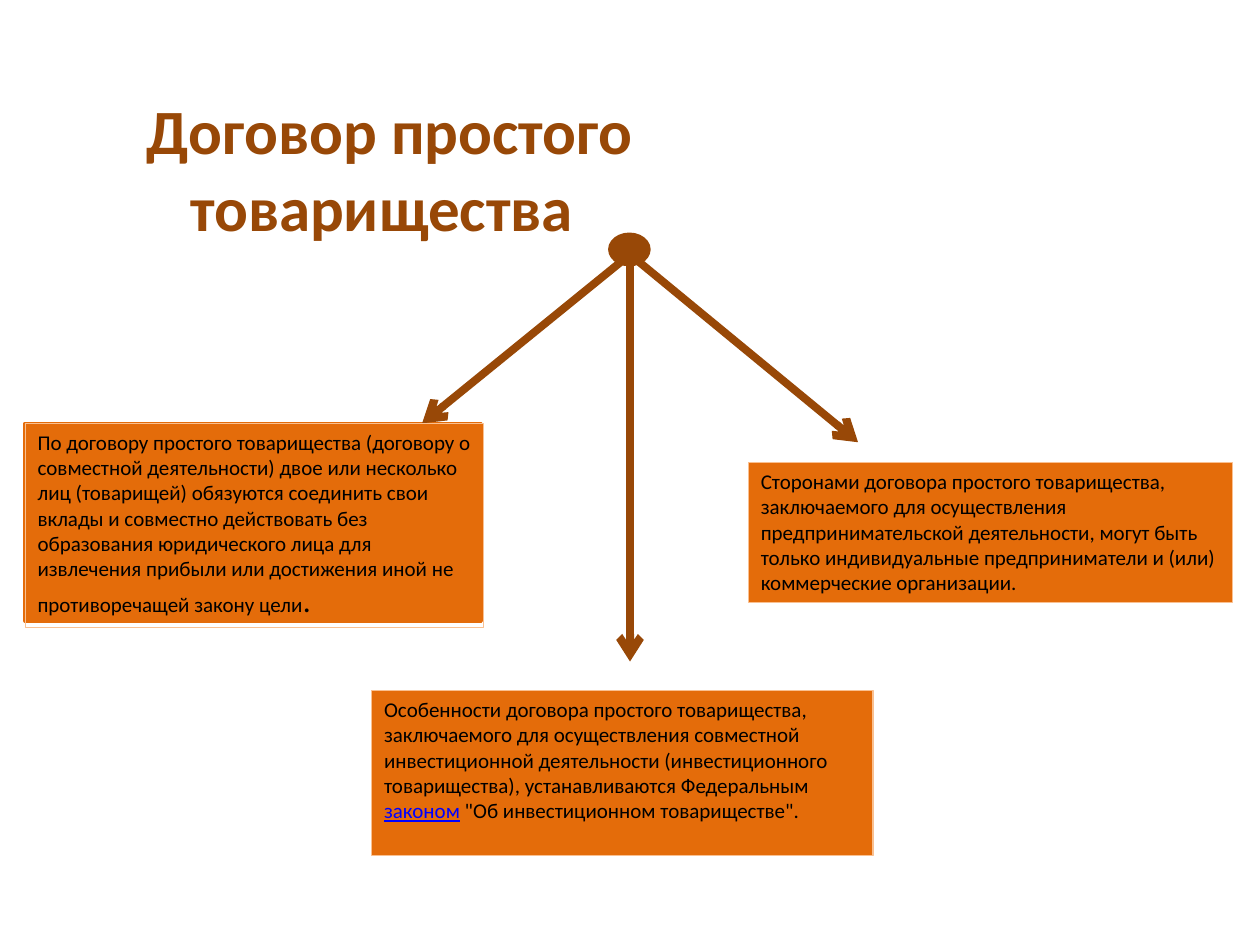
from lxml import etree
from pptx import Presentation
from pptx import util as u
from pptx.dml.color import RGBColor
from pptx.enum import shapes, text
from pptx.oxml.ns import qn

PX = 9144  # EMU per px, 100 px to the inch
FONT = "Calibri"
COLORS = {
    "brown": "984807",
    "orange": "E46C0A",
    "peach": "FAC090",
    "black": "000000",
    "blue": "0000FF",
}
HUB = (500, 202)

PARTNERSHIP = [
    ("По договору простого товарищества (договору о совместной деятельности) двое или "
     "несколько лиц (товарищей) обязуются соединить свои вклады и совместно действовать "
     "без образования юридического лица для извлечения прибыли или достижения иной не "
     "противоречащей закону цели", {}),
    (".", {"size": 18}),
]
PARTIES = [
    ("Сторонами договора простого товарищества, заключаемого для осуществления "
     "предпринимательской деятельности, могут быть только индивидуальные "
     "предприниматели и (или) коммерческие организации.", {}),
]
INVESTMENT = [
    ("Особенности договора простого товарищества, заключаемого для осуществления "
     "совместной инвестиционной деятельности (инвестиционного товарищества), "
     "устанавливаются Федеральным ", {}),
    ("законом", {"color": "blue", "underline": True}),
    (" \"Об инвестиционном товариществе\".", {}),
]


def px(*values):
    return [u.Emu(value * PX) for value in values]


def rgb(name):
    return RGBColor.from_string(COLORS[name])


def add_run(paragraph, wording, size=12, color="black", underline=None):
    run = paragraph.add_run()
    run.text = wording
    run.font.size = u.Pt(size)
    run.font.color.rgb = rgb(color)
    run.font.underline = underline


def add_figure(slide, kind, box, fill, line, width):
    shape = slide.shapes.add_shape(kind, *px(*box))
    shape.shadow.inherit = False
    if fill:
        shape.fill.solid()
        shape.fill.fore_color.rgb = rgb(fill)
    else:
        shape.fill.background()
    shape.line.color.rgb = rgb(line)
    shape.line.width = u.Pt(width)
    return shape


def add_text_panel(slide, box, runs, fill="orange"):
    shape = add_figure(slide, shapes.MSO_SHAPE.RECTANGLE, box, fill, "peach", 0.75)
    frame = shape.text_frame
    frame.word_wrap = True
    frame.vertical_anchor = text.MSO_ANCHOR.TOP
    paragraph = frame.paragraphs[0]
    paragraph.alignment = text.PP_ALIGN.LEFT
    paragraph.font.name = FONT
    for wording, style in runs:
        add_run(paragraph, wording, **style)
    for run in paragraph.runs:
        run.font.name = FONT


def add_title(slide):
    frame = slide.shapes.add_textbox(*px(51, 68, 504, 125)).text_frame
    frame.word_wrap = True
    frame.vertical_anchor = text.MSO_ANCHOR.MIDDLE
    paragraph = frame.paragraphs[0]
    paragraph.alignment = text.PP_ALIGN.CENTER
    add_run(paragraph, " ", 39.6)
    add_run(paragraph, "Договор простого товарищества", 36, "brown")
    for run in paragraph.runs:
        run.font.name = FONT
        run.font.bold = True


def add_arrow(slide, start, end):
    connector = slide.shapes.add_connector(
        shapes.MSO_CONNECTOR.STRAIGHT, *px(*start, *end))
    connector.line.color.rgb = rgb("brown")
    connector.line.width = u.Pt(4.5)
    etree.SubElement(connector.line._get_or_add_ln(), qn("a:tailEnd"), type="arrow")
    etree.SubElement(connector._element.spPr, qn("a:effectLst"))


def main():
    presentation = Presentation()
    presentation.slide_width, presentation.slide_height = px(1000, 750)
    slide = presentation.slides.add_slide(presentation.slide_layouts[6])

    # Backing of the left panel, then the title
    add_figure(slide, shapes.MSO_SHAPE.RECTANGLE, (20, 336, 362, 157),
               "orange", "orange", 2)
    add_title(slide)

    # Arrows from the hub to the three panels
    add_arrow(slide, HUB, (681, 351))
    add_arrow(slide, HUB, (335, 336))
    add_arrow(slide, (500, 186), (500, 525))

    # Panels and hub
    add_text_panel(slide, (20, 336, 364, 162), PARTNERSHIP, fill=None)
    add_figure(slide, shapes.MSO_SHAPE.OVAL, (484, 186, 31, 24), "brown", "brown", 2)
    add_text_panel(slide, (594, 367, 384, 111), PARTIES)
    add_text_panel(slide, (295, 548, 398, 131), INVESTMENT)

    presentation.save("out.pptx")


if __name__ == "__main__":
    main()
